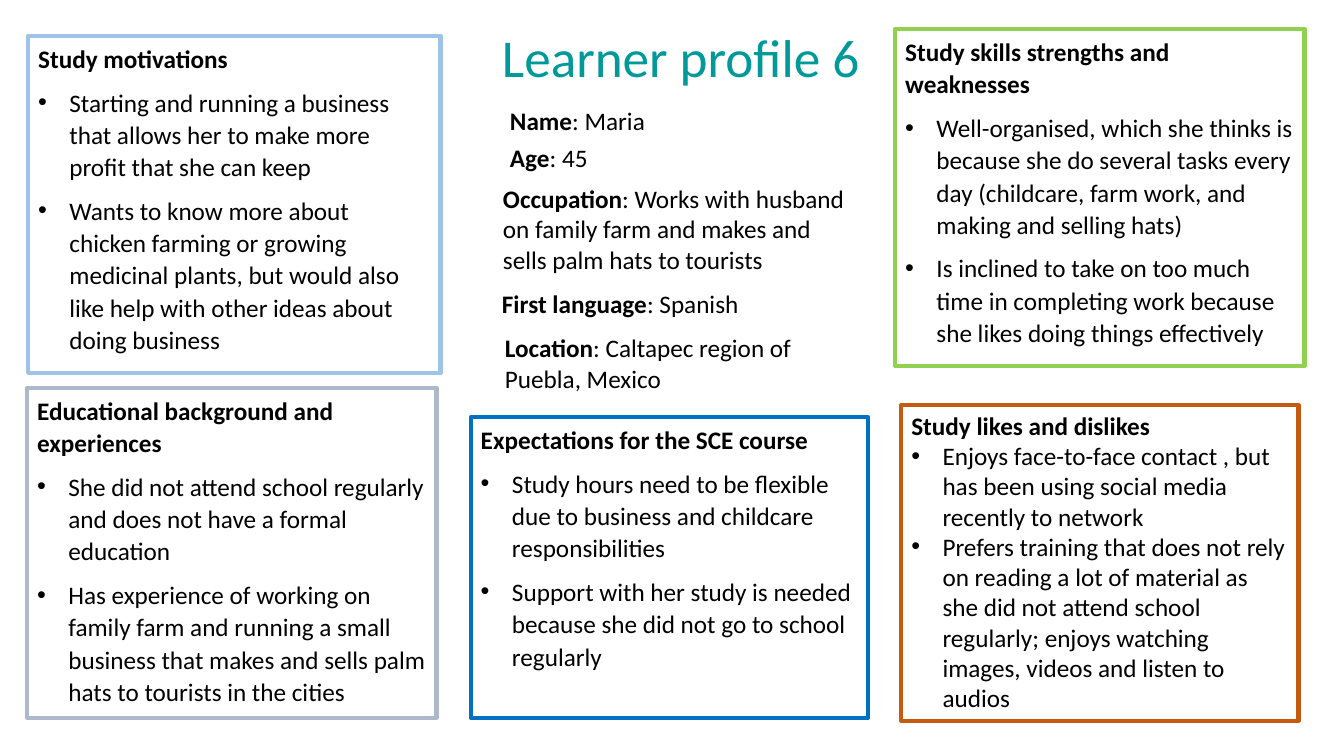
from lxml.etree import SubElement
from pptx import Presentation
from pptx.dml.color import RGBColor
from pptx.enum.shapes import MSO_SHAPE
from pptx.enum.text import MSO_ANCHOR, MSO_AUTO_SIZE, PP_ALIGN
from pptx.oxml.ns import qn
from pptx.util import Inches, Pt

BLACK = RGBColor(0x00, 0x00, 0x00)
WHITE = RGBColor(0xFF, 0xFF, 0xFF)
TEAL = RGBColor(0x00, 0x99, 0x99)
BLUE = RGBColor(0x00, 0x70, 0xC0)
LIGHT_BLUE = RGBColor(0x9D, 0xC3, 0xE6)
GREEN = RGBColor(0x92, 0xD0, 0x50)
GREY = RGBColor(0xAD, 0xB9, 0xCA)
ORANGE = RGBColor(0xC5, 0x5A, 0x11)

SPACED = {"line_spacing": 1.07, "space_after": Pt(8)}

# left, top, width, height, line colour, fill, paragraph format, heading, bullets
CARDS = [
    (4.67, 4.14, 3.94, 2.98, BLUE, WHITE, SPACED, "Expectations for the SCE course", [
        "Study hours need to be flexible due to business and childcare responsibilities",
        "Support with her study is needed because she did not go to school regularly"]),
    (0.28, 0.36, 4.09, 3.34, LIGHT_BLUE, WHITE, SPACED, "Study motivations", [
        "Starting and running a business that allows her to make more profit that she can keep",
        "Wants to know more about chicken farming or growing medicinal plants, "
        "but would also like help with other ideas about doing business"]),
    (8.88, 0.29, 4.06, 3.34, GREEN, WHITE, SPACED, "Study skills strengths and weaknesses", [
        "Well-organised, which she thinks is because she do several tasks every day "
        "(childcare, farm work, and making and selling hats)",
        "Is inclined to take on too much time in completing work because "
        "she likes doing things effectively"]),
    (0.27, 3.85, 4.06, 3.27, GREY, WHITE, SPACED, "Educational background and experiences", [
        "She did not attend school regularly and does not have a formal education",
        "Has experience of working on family farm and running a small business "
        "that makes and sells palm hats to tourists in the cities"]),
    (8.94, 4.02, 3.94, 3.13, ORANGE, None, {}, "Study likes and dislikes", [
        "Enjoys face-to-face contact , but has been using social media recently to network",
        "Prefers training that does not rely on reading a lot of material as she did not "
        "attend school regularly; enjoys watching images, videos and listen to audios"]),
]

# left, top, width, height, label, value
FACTS = [
    (4.96, 1, 3.76, 0.4, "Name", "Maria"),
    (4.96, 1.36, 3.17, 0.4, "Age", "45"),
    (4.89, 1.77, 3.71, 1.01, "Occupation",
     "Works with husband on family farm and makes and sells palm hats to tourists"),
    (4.88, 2.81, 3.45, 0.4, "First language", "Spanish"),
    (4.91, 3.25, 3.45, 0.71, "Location", "Caltapec region of Puebla, Mexico"),
]


class ProfileSlide:
    font = "Calibri"
    size = 18
    indent = Inches(0.31)

    def __init__(self, prs):
        self.s = prs.slides.add_slide(prs.slide_layouts[6])

    def paragraph(self, p, runs, size=size, color=BLACK, bullet=False, **fmt):
        """Fill p with (text, bold) runs."""
        for name, value in {"alignment": PP_ALIGN.LEFT, **fmt}.items():
            setattr(p, name, value)
        for text, bold in runs:
            r = p.add_run()
            r.text = text
            for name, value in {"name": self.font, "size": Pt(size), "bold": bold}.items():
                setattr(r.font, name, value)
            r.font.color.rgb = color
        if bullet:
            pPr = p._p.get_or_add_pPr()
            pPr.set("marL", str(self.indent))
            pPr.set("indent", str(-self.indent))
            SubElement(pPr, qn("a:buFont"), typeface="Arial")
            SubElement(pPr, qn("a:buChar"), char="•")

    def card(self, left, top, width, height, line, fill, fmt, heading, bullets):
        sp = self.s.shapes.add_shape(MSO_SHAPE.RECTANGLE, Inches(left), Inches(top),
                                     Inches(width), Inches(height))
        sp.shadow.inherit = False
        if fill is None:
            sp.fill.background()
        else:
            sp.fill.solid()
            sp.fill.fore_color.rgb = fill
        sp.line.color.rgb = line
        sp.line.width = Pt(3)
        tf = sp.text_frame
        tf.word_wrap = True
        tf.vertical_anchor = MSO_ANCHOR.TOP
        self.paragraph(tf.paragraphs[0], [(heading, True)], **fmt)
        for text in bullets:
            self.paragraph(tf.add_paragraph(), [(text, False)], bullet=True, **fmt)

    def text(self, left, top, width, height, runs, wrap=True, **fmt):
        tf = self.s.shapes.add_textbox(Inches(left), Inches(top),
                                       Inches(width), Inches(height)).text_frame
        tf.word_wrap = wrap
        tf.auto_size = MSO_AUTO_SIZE.SHAPE_TO_FIT_TEXT
        self.paragraph(tf.paragraphs[0], runs, **fmt)

    def fact(self, left, top, width, height, label, value):
        self.text(left, top, width, height, [(label, True), (f": {value}", False)])


def main():
    prs = Presentation()
    prs.slide_width = Inches(13.33)
    prs.slide_height = Inches(7.5)
    profile = ProfileSlide(prs)
    for card in CARDS:
        profile.card(*card)
    for fact in FACTS:
        profile.fact(*fact)
    profile.text(4.88, 0.26, 3.79, 0.68, [("Learner profile 6", False)], wrap=False,
                 size=38, color=TEAL, line_spacing=0.9, space_before=Pt(10))
    prs.save("out.pptx")


if __name__ == "__main__":
    main()
